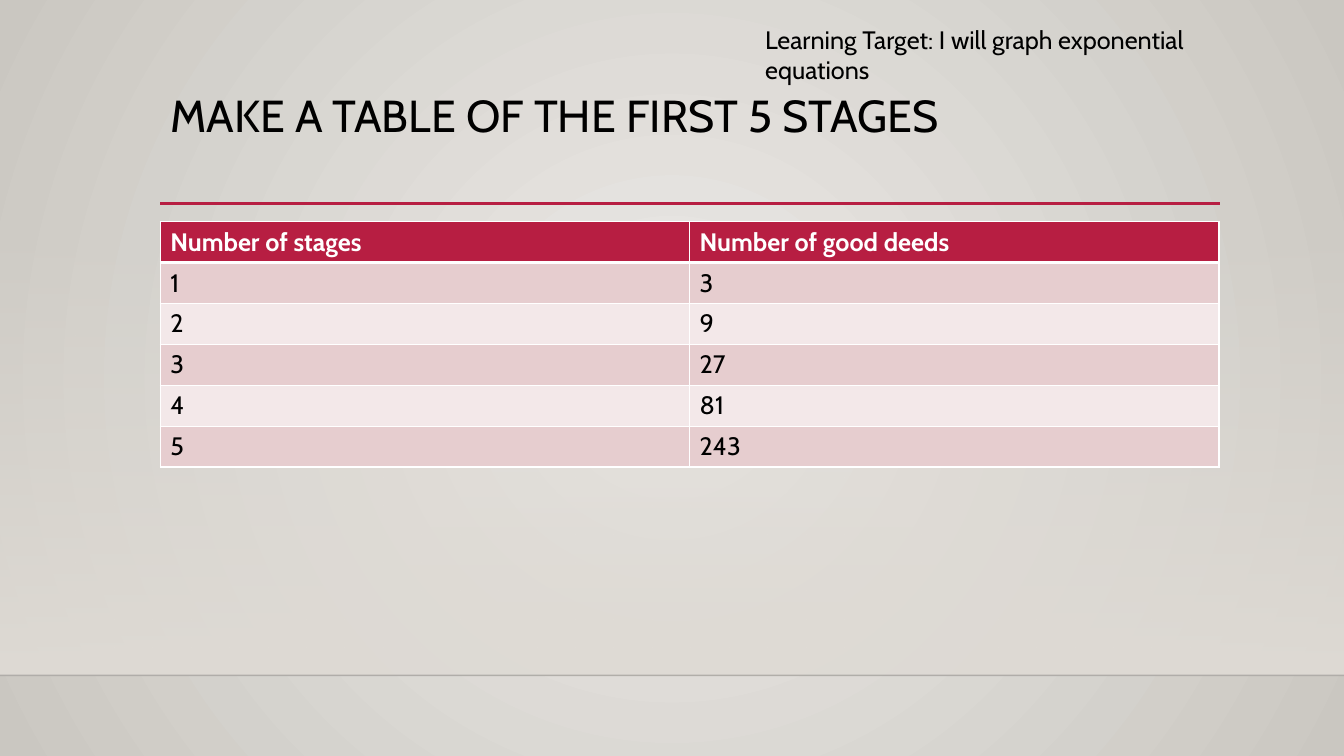
from lxml import etree
from pptx import Presentation
from pptx.dml.color import RGBColor
from pptx.enum import shapes, text
from pptx.oxml import parse_xml
from pptx.oxml.ns import nsdecls, qn
from pptx.util import Inches, Pt

FONT = "Cabin"
BLACK = RGBColor(0, 0, 0)
WHITE = RGBColor(0xFF, 0xFF, 0xFF)
CRIMSON = RGBColor(0xB7, 0x1E, 0x42)
ROSE = RGBColor(0xE6, 0xCD, 0xCF)
PALE_ROSE = RGBColor(0xF3, 0xE8, 0xE9)
LIGHT_STONE = RGBColor(0xEC, 0xEA, 0xE7)
DARK_STONE = RGBColor(0xCA, 0xC7, 0xC1)
SAND = RGBColor(0xDF, 0xDB, 0xD5)
NEAR_BLACK = RGBColor(0, 0, 1)

LEFT, WIDTH = 1.59, 10.5
SLIDE_WIDTH, FLOOR = 13.33, 6.7
ROWS = [("Number of stages", "Number of good deeds")] + [
    (str(stage), str(3 ** stage)) for stage in range(1, 6)]


def set_alpha(color_element, percent):
    """Make a colour partly transparent."""
    etree.SubElement(color_element, qn("a:alpha")).set("val", str(percent * 1000))


def set_gradient(fill, start, end):
    """Fill with a two-stop gradient running downwards."""
    fill.gradient()
    fill.gradient_angle = 270
    for stop, color in zip(fill.gradient_stops, (start, end)):
        stop.color.rgb = color


def set_font(p, size, color=BLACK, bold=False):
    """Format a whole paragraph."""
    p.font.name = FONT
    p.font.size = Pt(size)
    p.font.color.rgb = color
    p.font.bold = bold


def paint_background(s):
    """Give the slide a circular gradient background."""
    set_gradient(s.background.fill, LIGHT_STONE, DARK_STONE)
    lin = next(s.background.fill._xPr.iter(qn("a:lin")))
    lin.getparent().replace(lin, parse_xml(
        f'<a:path {nsdecls("a")} path="circle">'
        '<a:fillToRect l="50000" t="50000" r="50000" b="50000"/></a:path>'))


def add_band(s, top, bottom):
    """Add the full-width band that fades in towards the floor."""
    sp = s.shapes.add_shape(shapes.MSO_SHAPE.RECTANGLE, 0, Inches(top),
                            Inches(SLIDE_WIDTH), Inches(bottom - top))
    sp.shadow.inherit = False
    sp.line.fill.background()
    set_gradient(sp.fill, SAND, SAND)
    set_alpha(next(sp.element.spPr.iter(qn("a:srgbClr"))), 0)


def add_rule(s, left, right, y, color, width, alpha=100):
    """Add a horizontal line."""
    line = s.shapes.add_connector(shapes.MSO_CONNECTOR.STRAIGHT, Inches(left),
                                  Inches(y), Inches(right), Inches(y))
    line.line.color.rgb = color
    line.line.width = Pt(width)
    set_alpha(next(line.element.spPr.iter(qn("a:srgbClr"))), alpha)
    etree.SubElement(line.element.spPr, qn("a:effectLst"))


def set_title(s, words):
    """Place and format the title in front of the backdrop."""
    title = s.shapes.title
    title.element.getparent().append(title.element)
    title.left, title.top = Inches(LEFT), Inches(0.88)
    title.width, title.height = Inches(WIDTH), Inches(1.15)
    tf = title.text_frame
    tf.text = words
    tf.word_wrap = True
    tf.vertical_anchor = text.MSO_ANCHOR.TOP
    p = tf.paragraphs[0]
    p.alignment = text.PP_ALIGN.LEFT
    p.line_spacing = 0.9
    set_font(p, 32)


def set_borders(cell, bottom):
    """Draw white borders around a cell."""
    tcPr = cell._tc.get_or_add_tcPr()
    for side, width in (("L", 1), ("R", 1), ("T", 1), ("B", bottom)):
        tcPr.append(parse_xml(
            f'<a:ln{side} {nsdecls("a")} w="{Pt(width)}"><a:solidFill>'
            f'<a:srgbClr val="{WHITE}"/></a:solidFill></a:ln{side}>'))


def add_deeds_table(s):
    """Add the table of stages and good deeds."""
    table = s.shapes.add_table(len(ROWS), 2, Inches(LEFT), Inches(2.2),
                               Inches(WIDTH), Inches(2.43)).table
    for i, row in enumerate(ROWS):
        header = i == 0
        for j, words in enumerate(row):
            cell = table.cell(i, j)
            cell.text = words
            set_font(cell.text_frame.paragraphs[0], 18,
                     WHITE if header else BLACK, header)
            set_borders(cell, 3 if header else 1)
            cell.fill.solid()
            cell.fill.fore_color.rgb = (
                CRIMSON if header else ROSE if i % 2 else PALE_ROSE)


def add_learning_target(s, words):
    """Add the learning target at the top right."""
    tf = s.shapes.add_textbox(Inches(7.49), Inches(0.19),
                              Inches(5.28), Inches(0.4)).text_frame
    tf.word_wrap = True
    tf.text = words
    set_font(tf.paragraphs[0], 18)


def main():
    """Build and save the slide."""
    prs = Presentation()
    prs.slide_width, prs.slide_height = Inches(SLIDE_WIDTH), Inches(7.5)
    s = prs.slides.add_slide(prs.slide_layouts[5])
    paint_background(s)
    add_band(s, 2.21, FLOOR)
    add_rule(s, 0, SLIDE_WIDTH, FLOOR, NEAR_BLACK, 1, alpha=20)
    add_rule(s, LEFT, 12.1, 2.02, CRIMSON, 2.5)
    set_title(s, "MAKE A TABLE OF THE FIRST 5 STAGES")
    add_deeds_table(s)
    add_learning_target(s, "Learning Target: I will graph exponential equations")
    prs.save("out.pptx")


if __name__ == "__main__":
    main()
